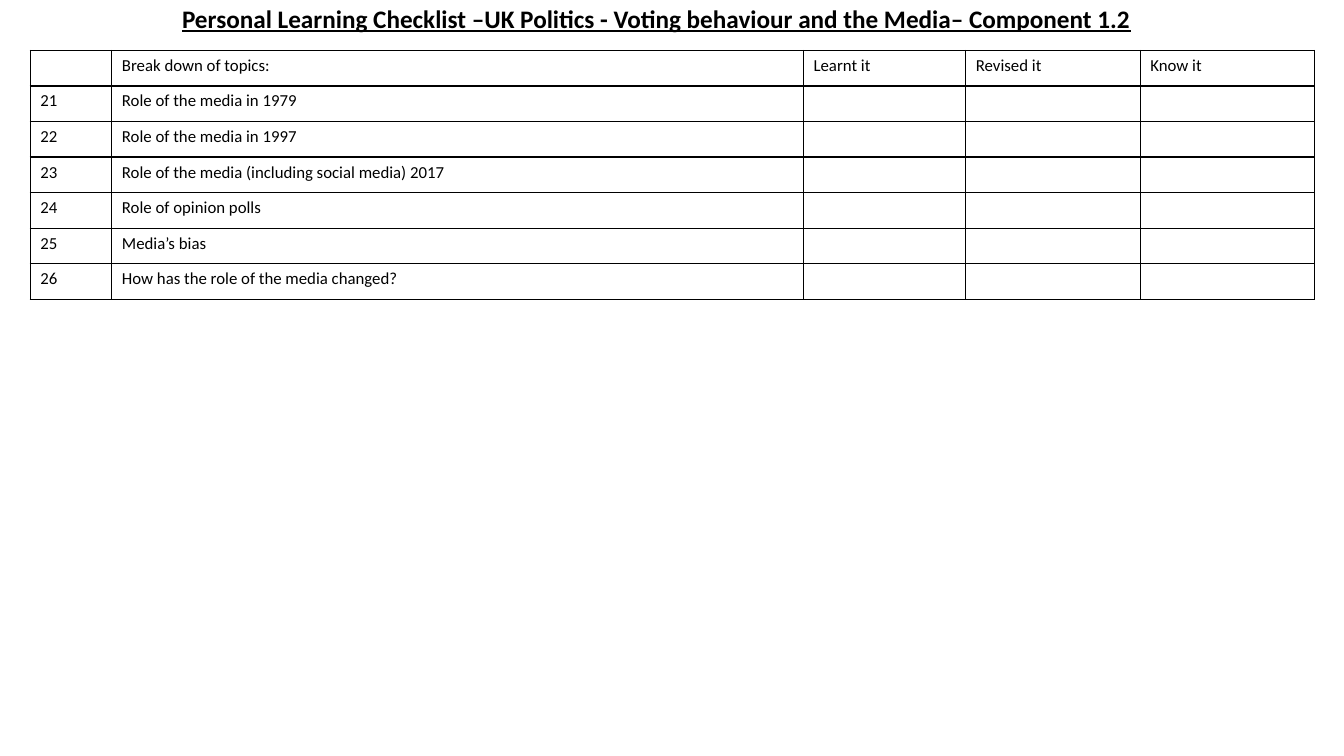
"""Build the Voting behaviour and the Media checklist slide."""
from lxml.etree import SubElement as Sub
from pptx import Presentation
from pptx.dml.color import RGBColor as Rgb
from pptx.enum.text import MSO_ANCHOR as Anchor, PP_ALIGN as Align
from pptx.oxml.ns import qn
from pptx.util import Inches, Pt

TITLE = ("Personal Learning Checklist –UK Politics - "
         "Voting behaviour and the Media– Component 1.2")
HEAD = ["", "Break down of topics:", "Learnt it", "Revised it", "Know it"]
FIRST = 21
TOPICS = [
    "Role of the media in 1979",
    "Role of the media in 1997",
    "Role of the media (including social media) 2017",
    "Role of opinion polls",
    "Media’s bias",
    "How has the role of the media changed?",
]
COLOURS = {"ink": "000000", "page": "FFFFFF"}
FONT = "Calibri"
LEFT, TOP = 0.3, 0.5
COLS = [0.81, 6.86, 1.61, 1.73, 1.73]
ROW = 2.47 / 7


def write(frame, text, size=12, bold=None, line=None, align=None, space=None):
    """Put one formatted paragraph in a text frame."""
    para = frame.paragraphs[0]
    para.alignment = align
    para.line_spacing = space
    if not text:
        Sub(para._p, qn("a:endParaRPr"), sz=str(size * 100))
        return
    run = para.add_run()
    run.text = text
    font = run.font
    font.name, font.size = FONT, Pt(size)
    font.bold, font.underline = bold, line
    font.color.rgb = Rgb.from_string(COLOURS["ink"])


def paint(cell):
    """Give a cell black edges and a plain fill."""
    props = cell._tc.get_or_add_tcPr()
    for side in ("lnL", "lnR", "lnT", "lnB"):
        edge = Sub(props, qn("a:" + side), w=str(Pt(1)))
        fill = Sub(edge, qn("a:solidFill"))
        Sub(fill, qn("a:srgbClr"), val=COLOURS["ink"])
    cell.fill.solid()
    cell.fill.fore_color.rgb = Rgb.from_string(COLOURS["page"])


def main():
    """Lay out the title and the checklist."""
    deck = Presentation()
    deck.slide_width, deck.slide_height = Inches(13.33), Inches(7.5)
    slide = deck.slides.add_slide(deck.slide_layouts[6])

    rows = [HEAD] + [[str(num), topic, "", "", ""]
                     for num, topic in enumerate(TOPICS, FIRST)]
    grid = slide.shapes.add_table(
        len(rows), len(COLS), Inches(LEFT), Inches(TOP),
        Inches(sum(COLS)), Inches(ROW * len(rows))).table
    grid.horz_banding = False
    for col, width in zip(grid.columns, COLS):
        col.width = Inches(width)
    for r, row in enumerate(rows):
        grid.rows[r].height = Inches(ROW)
        for c, text in enumerate(row):
            cell = grid.cell(r, c)
            paint(cell)
            write(cell.text_frame, text, bold=False)

    box = slide.shapes.add_textbox(
        Inches(LEFT), Inches(-0.05), Inches(12.42), Inches(0.5))
    frame = box.text_frame
    frame.word_wrap = True
    frame.vertical_anchor = Anchor.MIDDLE
    write(frame, TITLE, size=18, bold=True, line=True,
          align=Align.CENTER, space=0.9)
    deck.save("out.pptx")


if __name__ == "__main__":
    main()
